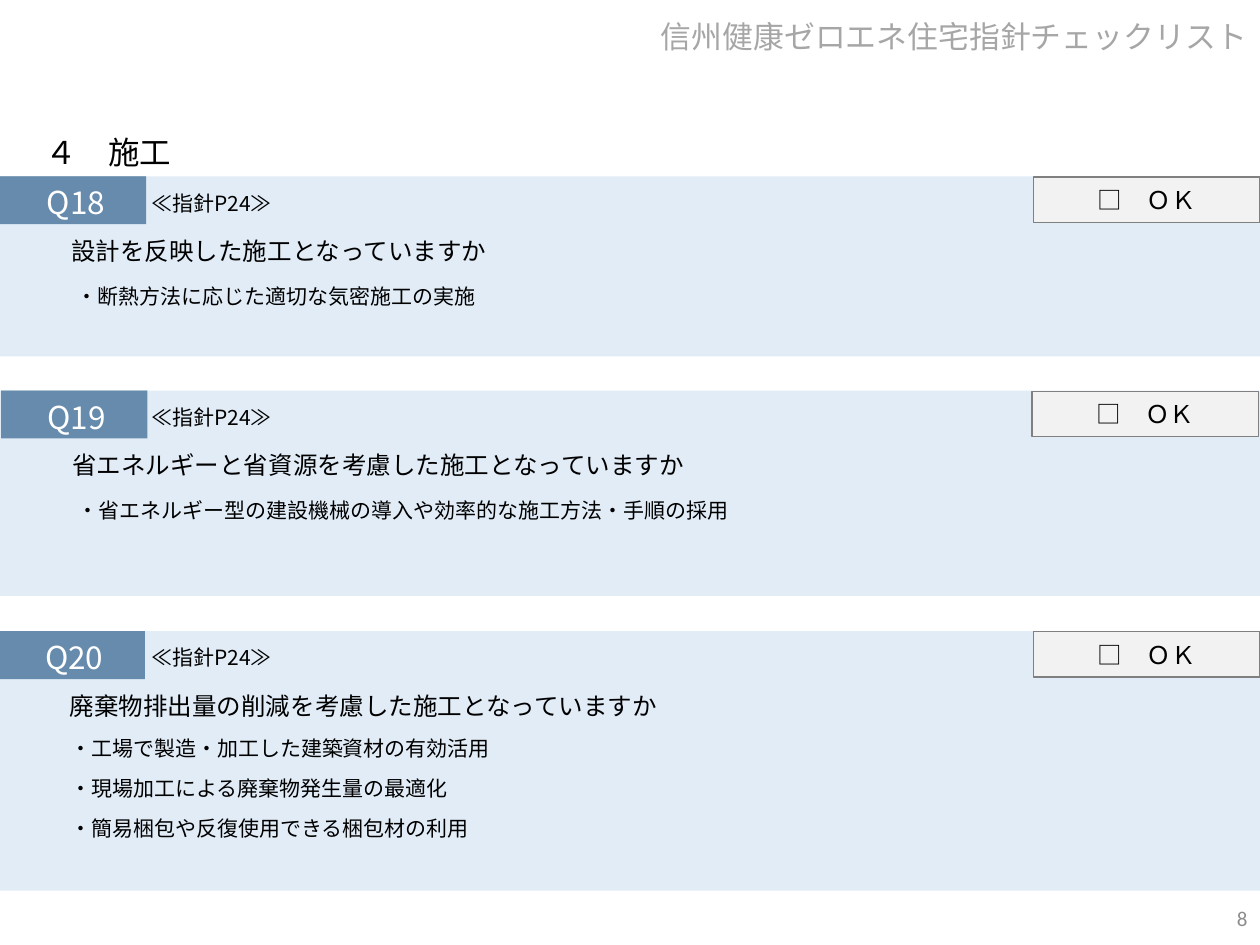
from lxml.etree import SubElement
from pptx import Presentation
from pptx.dml.color import RGBColor
from pptx.enum.shapes import MSO_SHAPE
from pptx.enum.text import MSO_ANCHOR, MSO_AUTO_SIZE, PP_ALIGN
from pptx.oxml.ns import qn
from pptx.util import Inches, Pt

HEX = {"tag": "1F4E79", "panel": "BDD7EE", "button": "F2F2F2", "edge": "808080",
       "ink": "000000", "white": "FFFFFF", "head": "A6A6A6", "page": "8C8C8C"}
FONT = "Noto Sans CJK JP"

deck = Presentation()
deck.slide_width, deck.slide_height = Inches(10), Inches(7.5)
slide = deck.slides.add_slide(deck.slide_layouts[1])
shapes = slide.shapes
unit = deck.slide_width / 100  # one column or row of the grid


def block(kind, left, top, width, height, fill=None):
    """Place a filled rectangle, a text box or a placeholder on the grid."""
    box = [round(n * unit) for n in (left, top, width, height)]
    if kind == "rect":
        item = shapes.add_shape(MSO_SHAPE.RECTANGLE, *box)
        item.shadow.inherit = False
        item.fill.solid()
        item.fill.fore_color.rgb = RGBColor.from_string(HEX[fill])
        item.line.fill.background()
    elif kind == "text":
        item = shapes.add_textbox(*box)
    else:
        item = kind
        item.left, item.top, item.width, item.height = box
        item.element.getparent().append(item.element)  # bring to front
    item.text_frame.word_wrap = True
    item.text_frame.auto_size = MSO_AUTO_SIZE.NONE
    return item


def write(para, text, size, color="ink", font=FONT, align=PP_ALIGN.LEFT,
          before=0, line=1.0, indent=0):
    para.text = text
    para.alignment = align
    para.space_before, para.line_spacing = Pt(before), line
    props = para._p.get_or_add_pPr()
    props.set("marL", str(round(indent * unit)))
    props.set("indent", "0")
    SubElement(props, qn("a:buNone"))
    for run in para.runs:
        run.font.size = Pt(size)
        run.font.color.rgb = RGBColor.from_string(HEX[color])
        run.font.name = font
        SubElement(run.font._element, qn("a:ea"), typeface=font)


# Page header and section heading
head = block(shapes.title, 0, 0, 100, 6.1)
head.text_frame.vertical_anchor = MSO_ANCHOR.MIDDLE
write(head.text_frame.paragraphs[0], "信州健康ゼロエネ住宅指針チェックリスト", 17.6,
      "head", align=PP_ALIGN.RIGHT, line=0.9)
part = block("text", 2.6, 10.1, 45.9, 4)
write(part.text_frame.paragraphs[0], "４　施工", 18)

# Questions: top, panel height, tag left, text left, button left, point spacing and indent
rows = [
    (14, 14.3, 0, 2.7, 82, 1.0, 2.4, "Q18", "設計を反映した施工となっていますか",
     ["・断熱方法に応じた適切な気密施工の実施"]),
    (31, 16.3, 0.1, 2.8, 81.9, 1.0, 2.4, "Q19", "省エネルギーと省資源を考慮した施工となっていますか",
     ["・省エネルギー型の建設機械の導入や効率的な施工方法・手順の採用"]),
    (50.1, 20.6, -0.1, 2.6, 82, 0.9, 2, "Q20", "廃棄物排出量の削減を考慮した施工となっていますか",
     ["・工場で製造・加工した建築資材の有効活用",
      "・現場加工による廃棄物発生量の最適化",
      "・簡易梱包や反復使用できる梱包材の利用"]),
]
for num, (top, high, tag, left, right, line, indent, name, ask, points) in enumerate(rows):
    # Tag under a see-through panel
    block("rect", tag, top, 11.6, 3.8, "tag")
    panel = block("rect", 0, top, 100, high, "panel")
    tint = panel.element.spPr.find(qn("a:solidFill"))[0]
    SubElement(tint, qn("a:alpha"), val="45000")

    # Question and its points
    kind = "text" if num else slide.placeholders[1]
    frame = block(kind, left, top + 0.4, 94.3, high + 1.6).text_frame
    write(frame.paragraphs[0], name, 18, "white", line=0.9)
    write(frame.add_paragraph(), ask, 14, before=10, line=0.9, indent=1.95)
    for point in points:
        write(frame.add_paragraph(), point, 12, before=10, line=line, indent=indent)

    # Check box and guide page
    button = block("rect", right, top + 0.05, 18, 3.6, "button")
    button.line.color.rgb = RGBColor.from_string(HEX["edge"])
    button.line.width = Pt(0.75)
    button.text_frame.vertical_anchor = MSO_ANCHOR.MIDDLE
    write(button.text_frame.paragraphs[0], "□　ＯＫ", 14, align=PP_ALIGN.CENTER)
    guide = block("text", 10.2, top + 0.6, 13.2, 3)
    write(guide.text_frame.paragraphs[0], "≪指針P24≫", 12, align=PP_ALIGN.CENTER)

# Page number
page = block("text", 77.5, 70.9, 22.5, 4)
page.text_frame.vertical_anchor = MSO_ANCHOR.MIDDLE
write(page.text_frame.paragraphs[0], "8", 12, "page", "Calibri", PP_ALIGN.RIGHT)

deck.save("out.pptx")
